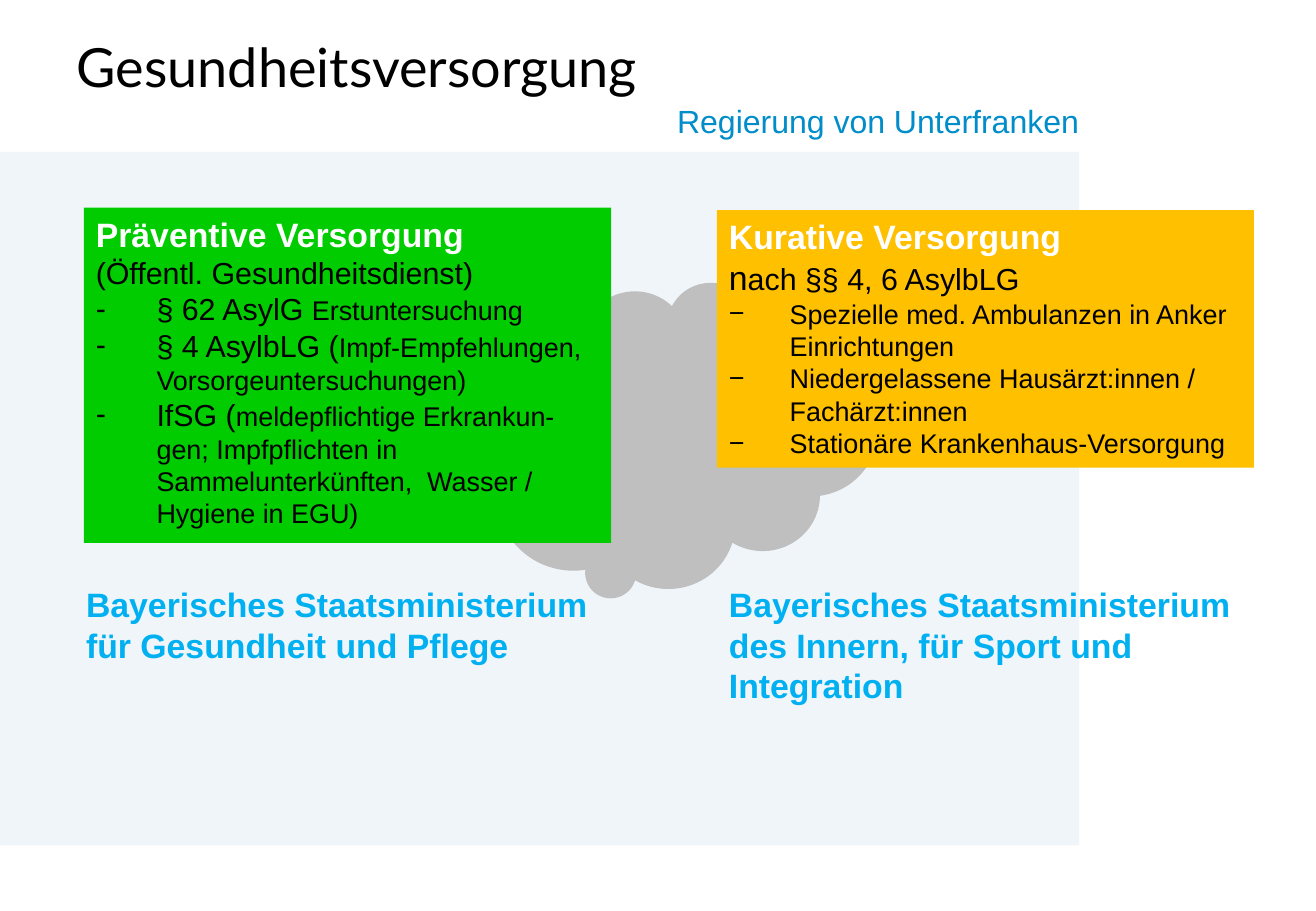
from dataclasses import dataclass

from lxml import etree
from pptx import Presentation
from pptx.dml.color import RGBColor
from pptx.enum.shapes import MSO_SHAPE
from pptx.enum.text import MSO_ANCHOR, MSO_AUTO_SIZE, PP_ALIGN
from pptx.oxml.ns import qn
from pptx.util import Inches, Pt

RECTANGLE, CLOUD = MSO_SHAPE.RECTANGLE, MSO_SHAPE.CLOUD_CALLOUT
TOP, BOTTOM = MSO_ANCHOR.TOP, MSO_ANCHOR.BOTTOM
LEFT, RIGHT = PP_ALIGN.LEFT, PP_ALIGN.RIGHT
GROW, FIXED = MSO_AUTO_SIZE.SHAPE_TO_FIT_TEXT, MSO_AUTO_SIZE.NONE
TITLE_ONLY = 5


@dataclass(frozen=True)
class Theme:
    body_font: str = "Arial"
    title_font: str = "Lato"
    black: str = "000000"
    white: str = "FFFFFF"
    panel: str = "F0F5FA"
    authority: str = "008DC9"
    ministry: str = "00B0F0"
    cloud: str = "BFBFBF"
    preventive: str = "00CC00"
    curative: str = "FFC000"
    title: int = 32
    heading: int = 20
    header: int = 19
    text: int = 18
    detail: int = 16


THEME = Theme()


def inches(box):
    return [Inches(value) for value in box]


def add_span(para, text, size, color=THEME.black, bold=False, font=THEME.body_font):
    span = para.add_run()
    span.text = text
    span.font.name = font
    span.font.size = Pt(size)
    span.font.bold = bold
    span.font.color.rgb = RGBColor.from_string(color)


def add_bullet(para, mark):
    """Hang the paragraph behind a dash at half an inch."""
    properties = para._p.get_or_add_pPr()
    properties.set("marL", str(Inches(0.5)))
    properties.set("indent", str(-Inches(0.5)))
    etree.SubElement(properties, qn("a:buFont")).set("typeface", THEME.body_font)
    etree.SubElement(properties, qn("a:buChar")).set("char", mark)


def add_filled(page, kind, box, color):
    shape = page.shapes.add_shape(kind, *inches(box))
    shape.shadow.inherit = False
    shape.fill.solid()
    shape.fill.fore_color.rgb = RGBColor.from_string(color)
    shape.line.fill.background()
    return shape


def add_background(page, box):
    """Pale panel with the authority's name right-aligned above its edge."""
    left, top, width, _ = box
    add_filled(page, RECTANGLE, box, THEME.panel)
    name_width = 3.68
    name_box = (left + width - name_width, top - 0.48, name_width, 0.43)
    frame = page.shapes.add_textbox(*inches(name_box)).text_frame
    frame.word_wrap = True
    frame.vertical_anchor = BOTTOM
    frame.margin_right = 0
    para = frame.paragraphs[0]
    para.alignment = RIGHT
    add_span(para, "Regierung von Unterfranken", THEME.header, THEME.authority)


def add_cloud(page, box):
    cloud = add_filled(page, CLOUD, box, THEME.cloud)
    cloud.adjustments[0] = -0.092
    cloud.adjustments[1] = 0.336


def add_title(page, box, text):
    title = page.shapes.title
    title.left, title.top, title.width, title.height = inches(box)
    frame = title.text_frame
    frame.auto_size = FIXED
    frame.vertical_anchor = TOP
    para = frame.paragraphs[0]
    para.alignment = LEFT
    add_span(para, text, THEME.title, font=THEME.title_font)


def add_care_card(page, box, color, heading, subtitle, mark, items):
    """Coloured card; subtitle and items are lists of (text, size)."""
    frame = add_filled(page, RECTANGLE, box, color).text_frame
    frame.word_wrap = True
    frame.auto_size = GROW
    frame.vertical_anchor = TOP
    first = frame.paragraphs[0]
    first.alignment = LEFT
    add_span(first, heading, THEME.heading, THEME.white, bold=True)
    for index, spans in enumerate([subtitle, *items]):
        para = frame.add_paragraph()
        para.alignment = LEFT
        if index:
            add_bullet(para, mark)
        for text, size in spans:
            add_span(para, text, size)


def add_ministry(page, box, name):
    frame = page.shapes.add_textbox(*inches(box)).text_frame
    frame.word_wrap = True
    frame.auto_size = GROW
    add_span(frame.paragraphs[0], name, THEME.heading, THEME.ministry, bold=True)


def build_health_care(deck):
    page = deck.slides.add_slide(deck.slide_layouts[TITLE_ONLY])
    add_background(page, (-0.01, 1.25, 8.89, 5.71))
    add_cloud(page, (3.7, 2.32, 3.52, 2.52))
    add_title(page, (0.53, 0.23, 9.1, 1.25), "Gesundheitsversorgung")
    text, detail = THEME.text, THEME.detail
    add_care_card(
        page, (0.69, 1.71, 4.34, 2.76), THEME.preventive, "Präventive Versorgung",
        [("(Öffentl. Gesundheitsdienst)", text)], "-",
        [
            [("§ 62 AsylG ", text), ("Erstuntersuchung", detail)],
            [("§ 4 AsylbLG (", text),
             ("Impf-Empfehlungen, Vorsorgeuntersuchungen)", detail)],
            [("IfSG (", text),
             ("meldepflichtige Erkrankun-gen; Impfpflichten in "
              "Sammelunterkünften,  Wasser / Hygiene in EGU)", detail)],
        ])
    add_care_card(
        page, (5.9, 1.73, 4.42, 2.12), THEME.curative, "Kurative Versorgung",
        [("n", THEME.heading), ("ach §§ 4, 6 AsylbLG", text)], "−",
        [
            [("Spezielle med. Ambulanzen in Anker Einrichtungen", detail)],
            [("Niedergelassene Hausärzt:innen / Fachärzt:innen", detail)],
            [("Stationäre Krankenhaus-Versorgung", detail)],
        ])
    add_ministry(page, (0.61, 4.76, 4.46, 0.77),
                 "Bayerisches Staatsministerium für Gesundheit und Pflege")
    add_ministry(page, (5.9, 4.76, 4.52, 1.11),
                 "Bayerisches Staatsministerium des Innern, für Sport und Integration")


def main():
    deck = Presentation()
    deck.slide_width, deck.slide_height = Inches(10.83), Inches(7.5)
    build_health_care(deck)
    deck.save("out.pptx")


if __name__ == "__main__":
    main()
